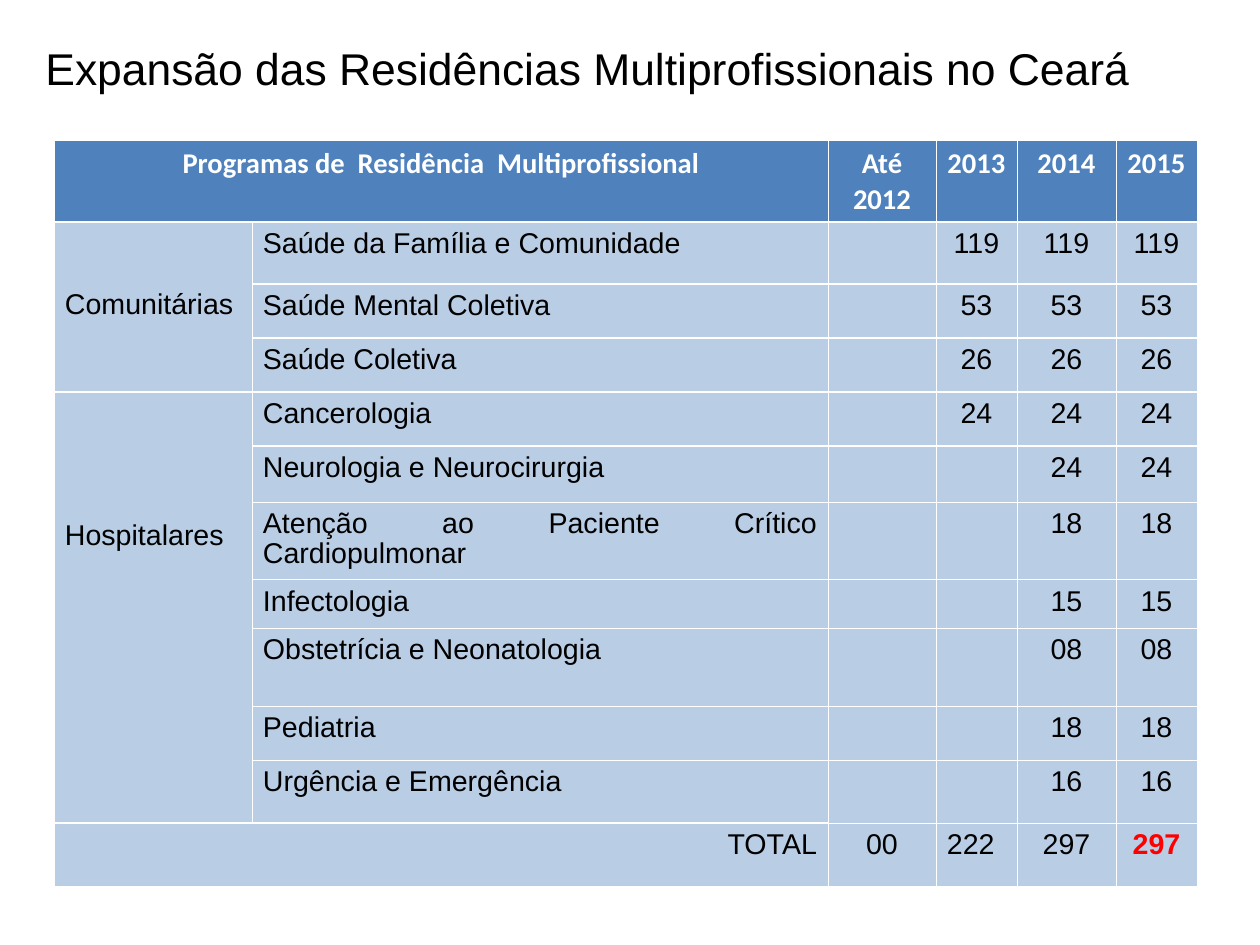
"""Builds the slide on the growth of multiprofessional residencies in Ceará."""
from lxml import etree
from pptx import Presentation
from pptx import util as u
from pptx.dml.color import RGBColor
from pptx.enum import text
from pptx.oxml import ns

PX = 8000
WHITE, BLACK, RED = "FFFFFF", "000000", "FF0000"
BLUE, PALE = "4F81BD", "B9CDE5"
THIN, THICK = 0.45, 1.47
ALIGN = text.PP_ALIGN


def style(para, font, size, color, bold=False):
    for run in para.runs:
        run.font.name = font
        run.font.size = u.Pt(size)
        run.font.bold = bold
        run.font.color.rgb = RGBColor.from_string(color)


def border(cell, side, width):
    line = etree.SubElement(cell._tc.get_or_add_tcPr(), ns.qn("a:ln" + side), w=str(u.Pt(width)))
    fill = etree.SubElement(line, ns.qn("a:solidFill"))
    etree.SubElement(fill, ns.qn("a:srgbClr"), val=WHITE)


deck = Presentation()
deck.slide_width, deck.slide_height = u.Emu(10080625), u.Emu(7559675)
slide = deck.slides.add_slide(deck.slide_layouts[5])

title = slide.shapes.title
title.left, title.top, title.width, title.height = 34 * PX, 35 * PX, 1225 * PX, 65 * PX
frame = title.text_frame
frame.text = "Expansão das Residências Multiprofissionais no Ceará"
frame.word_wrap = True
frame.auto_size = text.MSO_AUTO_SIZE.SHAPE_TO_FIT_TEXT
frame.vertical_anchor = text.MSO_ANCHOR.TOP
frame.paragraphs[0].alignment = ALIGN.LEFT
style(frame.paragraphs[0], "Arial", 28, BLACK)

rows = [
    ["Programas de  Residência  Multiprofissional", "", "Até 2012", "2013", "2014", "2015"],
    ["Comunitárias", "Saúde da Família e Comunidade", "", "119", "119", "119"],
    ["", "Saúde Mental Coletiva", "", "53", "53", "53"],
    ["", "Saúde Coletiva", "", "26", "26", "26"],
    ["Hospitalares", "Cancerologia", "", "24", "24", "24"],
    ["", "Neurologia e Neurocirurgia", "", "", "24", "24"],
    ["", "Atenção ao Paciente Crítico Cardiopulmonar", "", "", "18", "18"],
    ["", "Infectologia", "", "", "15", "15"],
    ["", "Obstetrícia e Neonatologia", "", "", "08", "08"],
    ["", "Pediatria", "", "", "18", "18"],
    ["", "Urgência e Emergência", "", "", "16", "16"],
    ["TOTAL", "", "00", "222", "297", "297"],
]
widths = [198, 576, 108, 81, 99, 81]
heights = [81, 62, 54, 54, 54, 56, 77, 48, 78, 54, 63, 63]
last = len(rows) - 1
aligns = {(0, 0): ALIGN.CENTER, (last, 0): ALIGN.RIGHT, (last, 3): ALIGN.JUSTIFY}
tops = {(1, 0): 69, (4, 0): 130}

table = slide.shapes.add_table(len(rows), len(widths), 54 * PX, 140 * PX,
                               sum(widths) * PX, sum(heights) * PX).table
table.horz_banding = False
for col, width in zip(table.columns, widths):
    col.width = width * PX
for row, height in zip(table.rows, heights):
    row.height = height * PX

for r, row in enumerate(rows):
    head = r == 0
    for c, value in enumerate(row):
        cell = table.cell(r, c)
        cell.margin_left = cell.margin_right = 11 * PX
        cell.margin_top = tops.get((r, c), 6 if head else 8) * PX
        cell.margin_bottom = 6 * PX
        for side, edge in (("L", 0), ("R", 0), ("T", r), ("B", r + 1)):
            thick = 1 <= edge <= 5 or (edge == last and c < 2)
            border(cell, side, THICK if thick else THIN)
        cell.fill.solid()
        cell.fill.fore_color.rgb = RGBColor.from_string(BLUE if head else PALE)
        cell.text_frame.text = value
        para = cell.text_frame.paragraphs[0]
        para.alignment = aligns.get((r, c), ALIGN.JUSTIFY if c < 2 else ALIGN.CENTER)
        para.line_spacing = 1.02 if head else 0.93
        style(para, "Calibri" if head else "Arial", 18, WHITE if head else BLACK, head)

style(table.cell(last, 5).text_frame.paragraphs[0], "Arial", 18, RED, True)
for start, end in (((0, 0), (0, 1)), ((1, 0), (3, 0)), ((4, 0), (10, 0)), ((last, 0), (last, 1))):
    table.cell(*start).merge(table.cell(*end))

deck.save("out.pptx")
